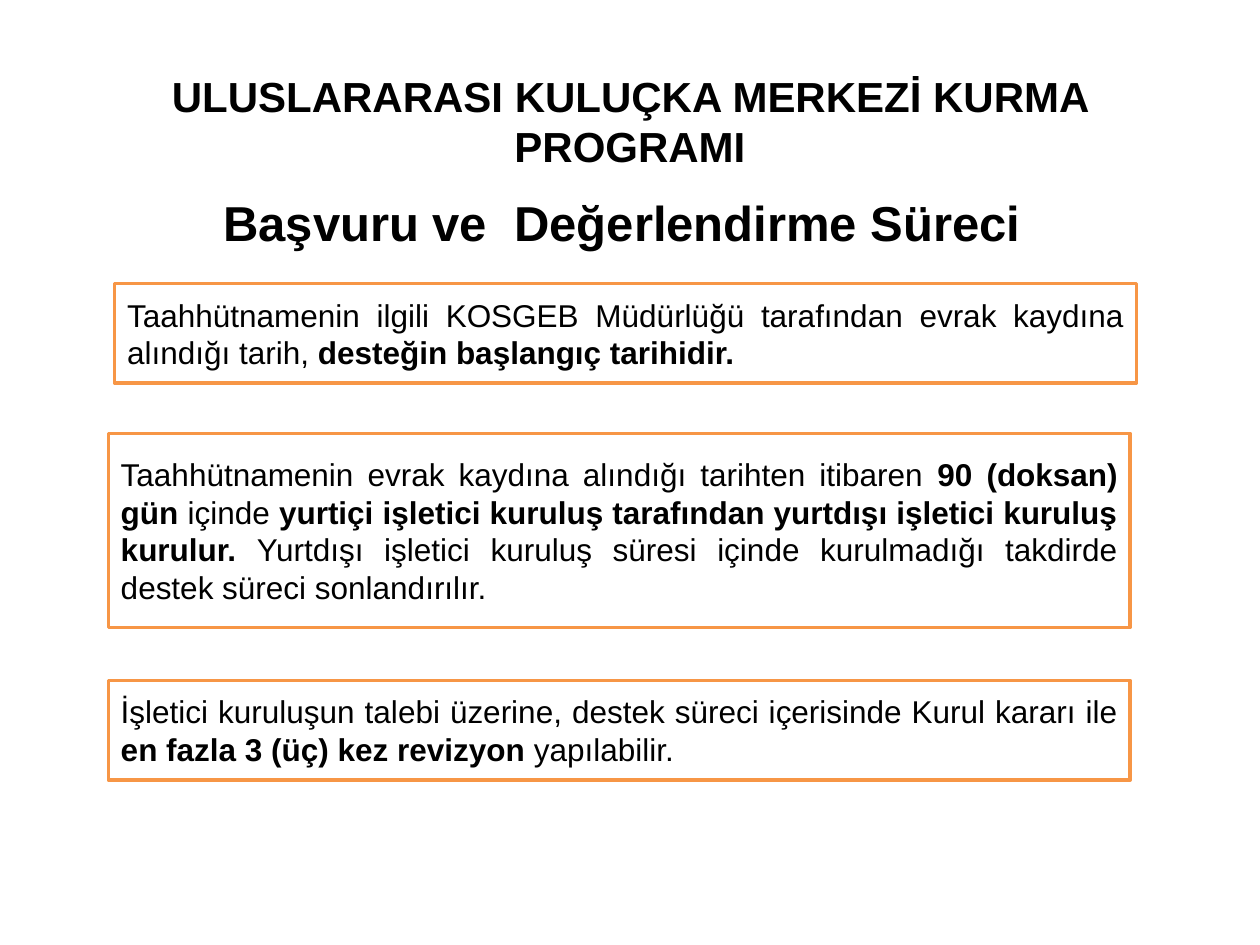
"""Build the slide on the application and evaluation process."""
from pptx import Presentation
from pptx.dml.color import RGBColor
from pptx.enum import shapes, text
from pptx.util import Inches, Pt

BLACK = RGBColor(0x00, 0x00, 0x00)
WHITE = RGBColor(0xFF, 0xFF, 0xFF)
ORANGE = RGBColor(0xF7, 0x96, 0x46)
FONT = "Arial"

WIDE, HIGH = 8.11, 0.79
RULES = [
    (0.91, 2.25, HIGH,
     "Taahhütnamenin ilgili KOSGEB Müdürlüğü tarafından evrak kaydına "
     "alındığı tarih, **desteğin başlangıç tarihidir."),
    (0.86, 3.44, 1.54,
     "Taahhütnamenin evrak kaydına alındığı tarihten itibaren **90 (doksan) "
     "gün **içinde **yurtiçi işletici kuruluş tarafından yurtdışı işletici "
     "kuruluş kurulur. **Yurtdışı işletici kuruluş süresi içinde "
     "kurulmadığı takdirde destek süreci sonlandırılır."),
    (0.86, 5.4, HIGH,
     "İşletici kuruluşun talebi üzerine, destek süreci içerisinde Kurul "
     "kararı ile **en fazla 3 (üç) kez revizyon **yapılabilir."),
]


def write(shape, words, size=18, bold=False, align=text.PP_ALIGN.CENTER,
          anchor=text.MSO_ANCHOR.MIDDLE, top=0.05):
    """Fill a shape with text in which each ** switches bold on or off."""
    frame = shape.text_frame
    frame.word_wrap = True
    frame.vertical_anchor = anchor
    frame.margin_top = Inches(top)
    para = frame.paragraphs[0]
    para.alignment = align
    for i, part in enumerate(words.split("**")):
        run = para.add_run()
        run.text = part
        run.font.name = FONT
        run.font.size = Pt(size)
        run.font.bold = bold != (i % 2 == 1)
        run.font.color.rgb = BLACK


def head(slide, words, left, top, width, height):
    """Add an empty text box and return it."""
    area = map(Inches, (left, top, width, height))
    write(slide.shapes.add_textbox(*area), **words)


def rule(slide, left, top, height, words):
    """Add an orange framed box with justified text."""
    area = map(Inches, (left, top, WIDE, height))
    box = slide.shapes.add_shape(shapes.MSO_SHAPE.RECTANGLE, *area)
    box.shadow.inherit = False
    box.fill.solid()
    box.fill.fore_color.rgb = WHITE
    box.line.color.rgb = ORANGE
    box.line.width = Pt(2)
    write(box, words, align=text.PP_ALIGN.JUSTIFY)


def main():
    """Build and save the slide."""
    deck = Presentation()
    deck.slide_width, deck.slide_height = Inches(10), Inches(7.5)
    slide = deck.slides.add_slide(deck.slide_layouts[6])
    title = dict(words="ULUSLARARASI KULUÇKA MERKEZİ KURMA PROGRAMI",
                 size=24, bold=True, top=0.11)
    topic = dict(words="Başvuru ve  Değerlendirme Süreci",
                 size=28, bold=True, anchor=text.MSO_ANCHOR.TOP)
    head(slide, title, 0.5, 0.3, 9, 1.25)
    head(slide, topic, 0.27, 1.48, 9.33, 0.57)
    for left, top, height, words in RULES:
        rule(slide, left, top, height, words)
    deck.save("out.pptx")


if __name__ == "__main__":
    main()
